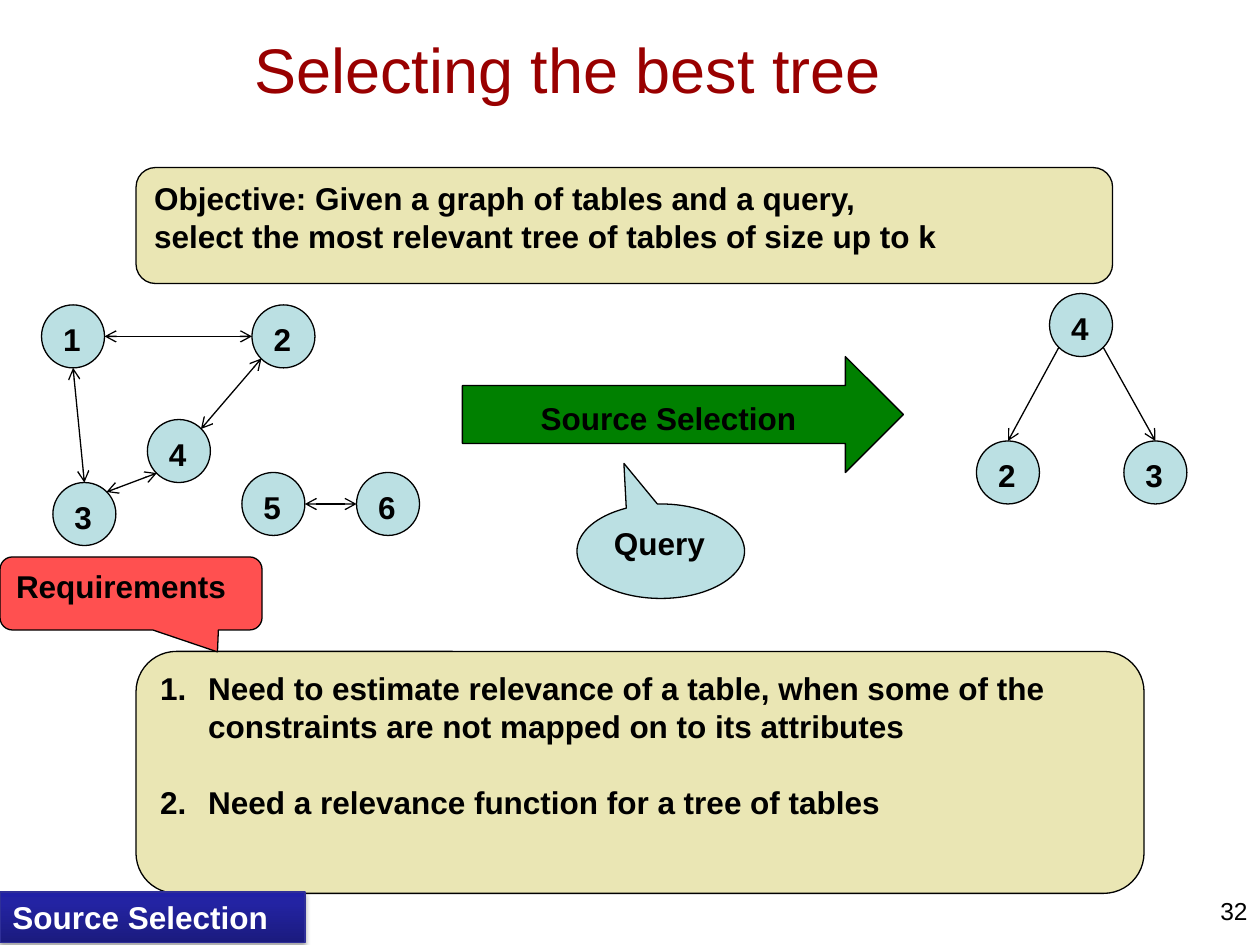
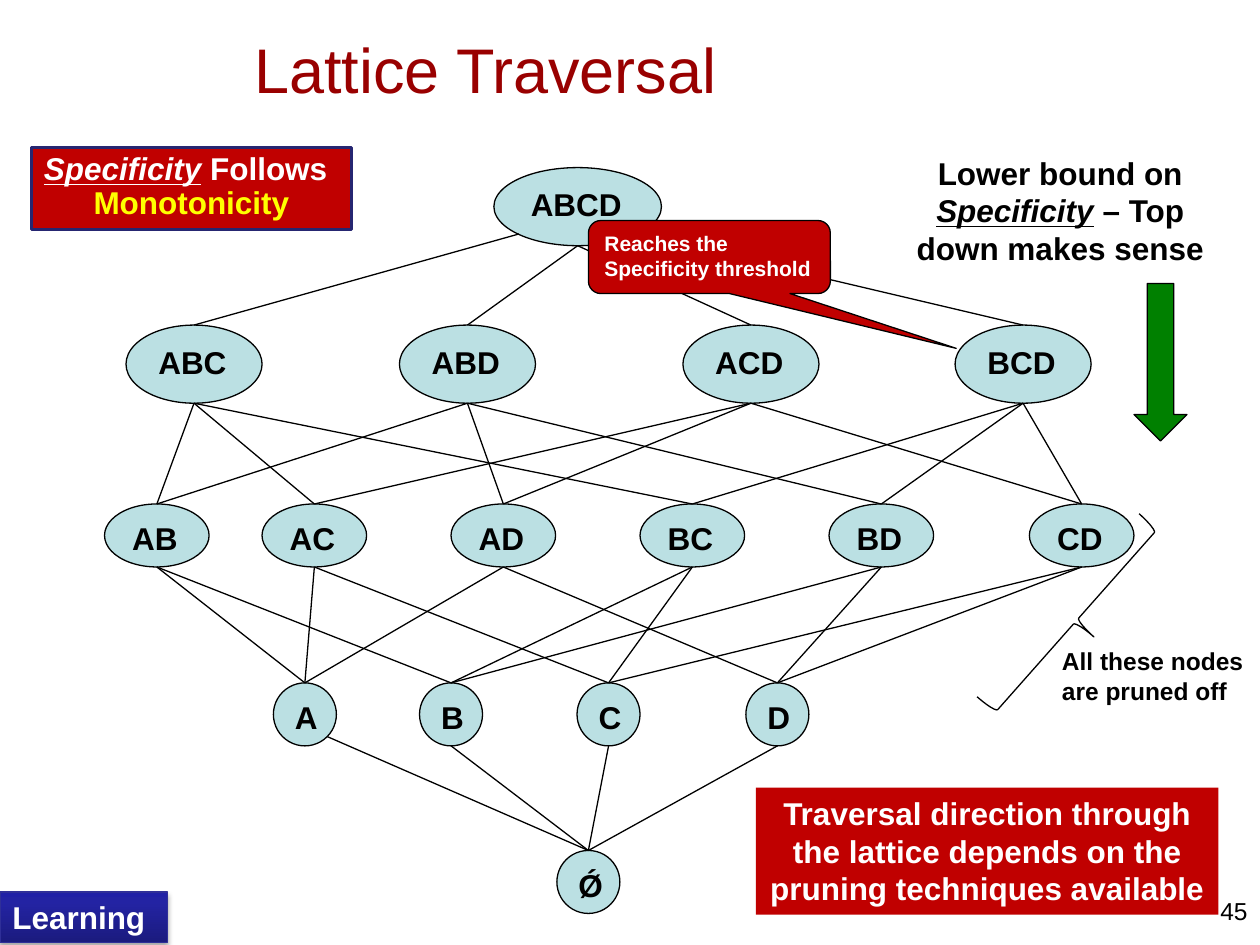
"""Build two slides on choosing a tree of tables and on traversing a lattice."""
from copy import deepcopy
from dataclasses import dataclass
from itertools import pairwise, product
from typing import Optional, Union

from lxml.etree import SubElement
from pptx import Presentation
from pptx.dml.color import RGBColor
from pptx.enum.shapes import MSO_CONNECTOR as Connector, MSO_SHAPE as Preset
from pptx.enum.text import MSO_ANCHOR as Anchor, PP_ALIGN as Align
from pptx.oxml.ns import qn
from pptx.util import Inches, Pt

COLORS = {
    "black": "000000", "white": "FFFFFF", "title": "990000", "sand": "EAE6B4",
    "node": "BBE0E3", "green": "008000", "coral": "FF5050", "red": "C00000",
    "navy": "262671", "yellow": "FFFF00", "band_line": "2F2F98",
    "band_dark": "1B1B7E", "band_mid": "2323A3", "band_light": "2020A6",
}
BAND_STOPS = ((0, "band_dark"), (0.8, "band_mid"), (1, "band_light"))
FONT = "Arial"
PORTS = {
    "top": (0.5, 0), "left": (0, 0.5), "bottom": (0.5, 1), "right": (1, 0.5),
    "top_right": (0.85, 0.15), "bottom_left": (0.15, 0.85), "bottom_right": (0.85, 0.85),
}


@dataclass(frozen=True)
class Box:
    """A rectangle on the slide, in inches."""
    left: float
    top: float
    width: float
    height: float

    def lengths(self) -> tuple:
        """Return the four lengths for python-pptx."""
        return tuple(Inches(v) for v in (self.left, self.top, self.width, self.height))

    def port(self, name: str) -> tuple:
        """Return the point where a line meets the outline."""
        across, down = PORTS[name]
        return Inches(self.left + across * self.width), Inches(self.top + down * self.height)


@dataclass(frozen=True)
class Run:
    """A piece of text with its own emphasis or colour."""
    text: str
    stressed: bool = False
    color: Optional[str] = None


@dataclass(frozen=True)
class Edge:
    """A line between ports of two named nodes."""
    start: str
    start_port: str
    end: str
    end_port: str


@dataclass(frozen=True)
class Level:
    """One row of lattice nodes of equal size."""
    names: tuple
    lefts: tuple
    top: float
    width: float
    height: float


Text = Union[str, list]


def rgb(name: str) -> RGBColor:
    """Look up a colour by name."""
    return RGBColor.from_string(COLORS[name])


def write(shape, text: Text, *, size: float = 18, color: str = "black", bold: bool = True,
          aligns: tuple = (Align.LEFT,), anchor=Anchor.TOP, numbered: bool = False,
          line_spacing: Optional[float] = None, gap: float = 0) -> None:
    """Fill a shape with a string or with a list of paragraphs made of runs."""
    frame = shape.text_frame
    frame.word_wrap = True
    frame.vertical_anchor = anchor
    paragraphs = [[Run(text)]] if isinstance(text, str) else text
    for index, runs in enumerate(paragraphs):
        paragraph = frame.add_paragraph() if index else frame.paragraphs[0]
        if numbered:
            properties = paragraph._p.get_or_add_pPr()
            properties.set("marL", str(Inches(0.38)))
            properties.set("indent", str(-Inches(0.38)))
            SubElement(properties, qn("a:buFont")).set("typeface", FONT)
            SubElement(properties, qn("a:buAutoNum")).set("type", "arabicPeriod")
        paragraph.alignment = aligns[min(index, len(aligns) - 1)]
        if line_spacing:
            paragraph.line_spacing = line_spacing
        if index and gap:
            paragraph.space_before = Pt(gap)
        for part in runs:
            for number, piece in enumerate(part.text.split("\n")):
                if number:
                    paragraph.add_line_break()
                run = paragraph.add_run()
                run.text = piece
                font = run.font
                font.name, font.size, font.bold = FONT, Pt(size), bold
                font.italic = font.underline = part.stressed
                font.color.rgb = rgb(part.color or color)


def add_label(slide, box: Box, text: Text, **text_format) -> None:
    """Add text without a frame."""
    write(slide.shapes.add_textbox(*box.lengths()), text, **text_format)


def add_figure(slide, preset, box: Box, fill: Optional[str], text: Text = "", *,
               line: Optional[str] = "black", line_width: float = 0.75,
               adjustments: tuple = (), **text_format):
    """Add a preset shape with flat fill, outline and text."""
    shape = slide.shapes.add_shape(preset, *box.lengths())
    shape.shadow.inherit = False
    for index, value in enumerate(adjustments):
        shape.adjustments[index] = value
    if fill:
        shape.fill.solid()
        shape.fill.fore_color.rgb = rgb(fill)
    else:
        shape.fill.background()
    if line:
        shape.line.color.rgb = rgb(line)
        shape.line.width = Pt(line_width)
    else:
        shape.line.fill.background()
    if text:
        write(shape, text, **text_format)
    return shape


def add_nodes(slide, nodes: dict) -> None:
    """Draw every named node as an ellipse."""
    for name, box in nodes.items():
        add_figure(slide, Preset.OVAL, box, "node", name)


def add_edge(slide, nodes: dict, edge: Edge, arrow_ends: tuple = ()) -> None:
    """Draw a straight line between two nodes, with arrowheads at the given ends."""
    begin = nodes[edge.start].port(edge.start_port)
    end = nodes[edge.end].port(edge.end_port)
    connector = slide.shapes.add_connector(Connector.STRAIGHT, *begin, *end)
    connector.line.color.rgb = rgb("black")
    connector.line.width = Pt(0.75)
    properties = connector.element.spPr
    for arrow_end in arrow_ends:
        SubElement(properties.find(qn("a:ln")), qn(f"a:{arrow_end}")).set("type", "arrow")
    SubElement(properties, qn("a:effectLst"))


def add_band(slide, text: str, width: float) -> None:
    """Draw the shaded section band in the lower left corner."""
    shape = add_figure(slide, Preset.RECTANGLE, Box(0, 7.08, width, 0.4), "band_mid", text,
                       line="band_line", color="white")
    shape.fill.gradient()
    shape.fill.gradient_angle = 90
    properties = shape.element.spPr
    stop_list = next(properties.iter(qn("a:gsLst")))
    stop_list.append(deepcopy(stop_list[0]))
    for stop, (position, color) in zip(shape.fill.gradient_stops, BAND_STOPS):
        stop.position = position
        stop.color.rgb = rgb(color)
    shadow = SubElement(properties.find(qn("a:effectLst")), qn("a:outerShdw"),
                        blurRad=str(Pt(3.1)), dist=str(Pt(1.8)), dir="5400000", rotWithShape="0")
    shade = SubElement(shadow, qn("a:srgbClr"), val=COLORS["black"])
    SubElement(shade, qn("a:alpha"), val="35000")


def add_slide(presentation, title: str, number: int):
    """Add a blank slide with the shared title and page number."""
    slide = presentation.slides.add_slide(presentation.slide_layouts[6])
    add_label(slide, Box(1.92, -0.08, 8, 1.25), title, size=36, color="title", bold=False,
              anchor=Anchor.MIDDLE)
    add_label(slide, Box(7.67, 7.06, 2.33, 0.52), str(number), size=14, bold=False,
              aligns=(Align.RIGHT,))
    return slide


def build_tree_slide(presentation) -> None:
    """Show how a query turns a graph of tables into a tree."""
    slide = add_slide(presentation, "Selecting the best tree", 32)
    add_figure(slide, Preset.ROUNDED_RECTANGLE, Box(1.08, 1.33, 7.75, 0.92), "sand",
               "Objective: Given a graph of tables and a query,\n"
               "select the most relevant tree of tables of size up to k")

    graph_places = {"1": (0.33, 2.42), "2": (2, 2.42), "3": (0.42, 3.83),
                    "4": (1.17, 3.33), "5": (1.92, 3.75), "6": (2.83, 3.75)}
    tree_places = {"4": (8.33, 2.33), "2": (7.75, 3.5), "3": (8.92, 3.5)}
    graph_edges = (Edge("6", "left", "5", "right"), Edge("2", "bottom_left", "4", "top_right"),
                   Edge("2", "left", "1", "right"), Edge("4", "bottom_left", "3", "top_right"),
                   Edge("1", "bottom", "3", "top"))
    tree_edges = (Edge("4", "bottom_left", "2", "top"), Edge("4", "bottom_right", "3", "top"))
    for places, edges, arrow_ends in ((graph_places, graph_edges, ("headEnd", "tailEnd")),
                                      (tree_places, tree_edges, ("tailEnd",))):
        nodes = {name: Box(*place, 0.5, 0.5) for name, place in places.items()}
        add_nodes(slide, nodes)
        for edge in edges:
            add_edge(slide, nodes, edge, arrow_ends)

    add_figure(slide, Preset.RIGHT_ARROW, Box(3.67, 2.83, 3.5, 0.92), "green",
               "Source Selection", aligns=(Align.CENTER,), anchor=Anchor.BOTTOM)
    requirements = [
        [Run("Need to estimate relevance of a table, when some of the "
             "constraints are not mapped on to its attributes")],
        [Run("Need a relevance function for a tree of tables")],
    ]
    add_figure(slide, Preset.ROUNDED_RECTANGLE, Box(1.08, 5.17, 8, 1.92), "sand",
               requirements, numbered=True, gap=21.5)
    add_figure(slide, Preset.OVAL_CALLOUT, Box(4.58, 4, 1.33, 0.75), "node", "Query",
               adjustments=(-0.22, -0.93))
    add_band(slide, "Source Selection", 2.42)
    add_figure(slide, Preset.ROUNDED_RECTANGULAR_CALLOUT, Box(0, 4.42, 2.08, 0.58), "coral",
               "Requirements", adjustments=(0.33, 0.8, 0.17))


def build_lattice_slide(presentation) -> None:
    """Show the lattice of attribute sets and the part that is pruned."""
    slide = add_slide(presentation, "Lattice Traversal", 45)
    add_band(slide, "Learning", 1.33)
    empty_set = "Ǿ"
    levels = (
        Level(("ABCD",), (3.92,), 1.33, 1.33, 0.62),
        Level(("ABC", "ABD", "ACD", "BCD"), (1, 3.17, 5.42, 7.58), 2.58, 1.08, 0.62),
        Level(("AB", "AC", "AD", "BC", "BD", "CD"),
              (0.83, 2.08, 3.58, 5.08, 6.58, 8.17), 4, 0.83, 0.5),
        Level(("A", "B", "C", "D"), (2.17, 3.33, 4.58, 5.92), 5.42, 0.5, 0.5),
        Level((empty_set,), (4.42,), 6.75, 0.5, 0.5),
    )
    nodes = {name: Box(left, level.top, level.width, level.height)
             for level in levels for name, left in zip(level.names, level.lefts)}
    add_nodes(slide, nodes)
    corner_starts = {("ABCD", "ABC"): "bottom_left", ("ABCD", "BCD"): "bottom_right",
                     ("A", empty_set): "bottom_right"}
    for upper, lower in pairwise(levels):
        for parent, child in product(upper.names, lower.names):
            if child == empty_set or set(child) < set(parent):
                start_port = corner_starts.get((parent, child), "bottom")
                add_edge(slide, nodes, Edge(parent, start_port, child, "top"))

    add_figure(slide, Preset.RECTANGLE, Box(6, 6.25, 3.67, 1.01), "red",
               "Traversal direction through the lattice depends on the pruning "
               "techniques available", line=None, color="white", aligns=(Align.CENTER,))
    add_figure(slide, Preset.DOWN_ARROW, Box(9, 2.25, 0.42, 1.25), "green")
    add_label(slide, Box(7, 1.17, 2.83, 1.01),
              [[Run("Lower bound on "), Run("Specificity", stressed=True),
                Run(" – Top down makes sense")]], aligns=(Align.CENTER,))
    add_figure(slide, Preset.RECTANGLE, Box(0.25, 1.17, 2.54, 0.65), "red",
               [[Run("Specificity", stressed=True), Run(" Follows")],
                [Run("Monotonicity", color="yellow")]],
               line="navy", line_width=2, color="white", line_spacing=0.9,
               aligns=(Align.LEFT, Align.CENTER))
    add_figure(slide, Preset.ROUNDED_RECTANGULAR_CALLOUT, Box(4.67, 1.75, 1.92, 0.58), "red",
               "Reaches the Specificity threshold", adjustments=(1.02, 1.25, 0.17),
               size=12, color="white")
    brace = add_figure(slide, Preset.RIGHT_BRACE, Box(8.35, 3.96, 0.38, 1.94), None)
    brace.rotation = 41.5
    add_label(slide, Box(8.33, 5.08, 1.67, 0.57), "All these nodes are pruned off", size=14)


def main() -> None:
    """Build and save the presentation."""
    presentation = Presentation()
    presentation.slide_width, presentation.slide_height = Inches(10), Inches(7.5)
    build_tree_slide(presentation)
    build_lattice_slide(presentation)
    presentation.save("out.pptx")


if __name__ == "__main__":
    main()
